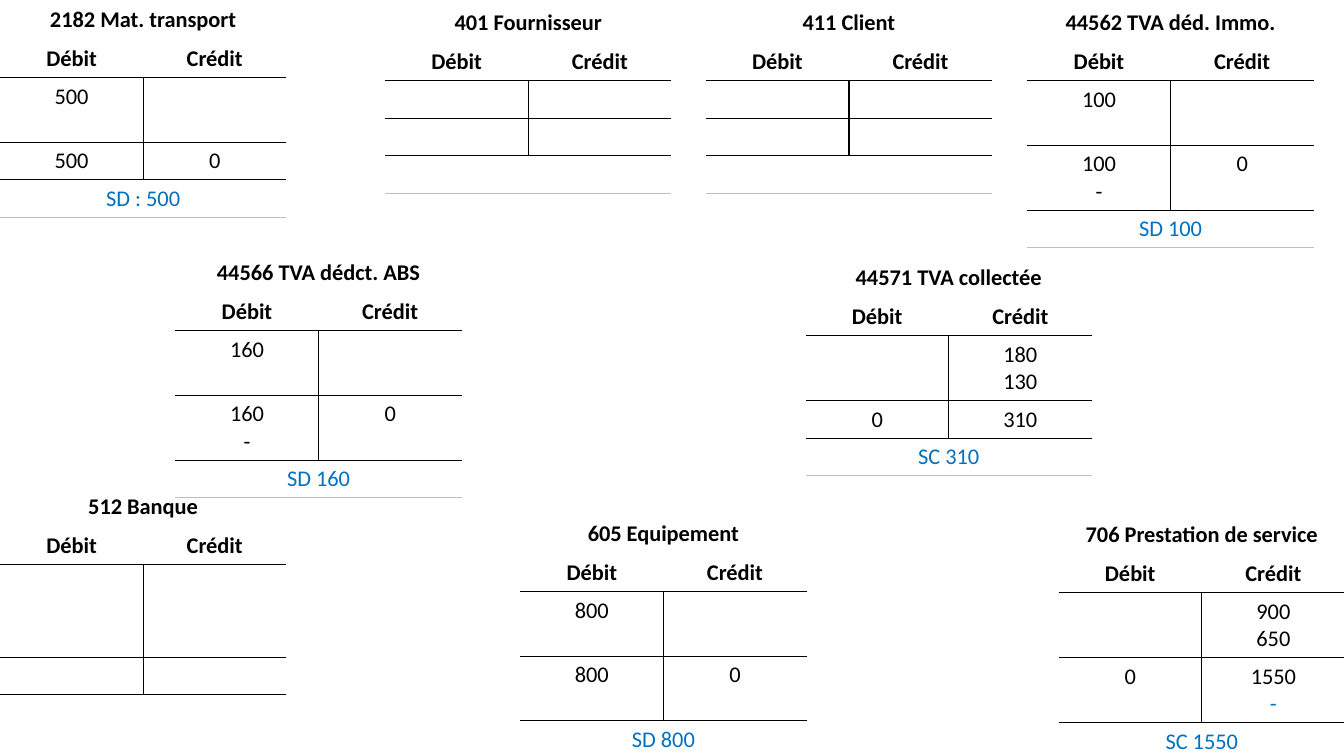
"""Builds a slide of nine T-accounts with their debits, credits and balances."""
from dataclasses import dataclass

import lxml.etree
import pptx
import pptx.dml.color
import pptx.enum.text
import pptx.oxml.ns
import pptx.slide
import pptx.table
import pptx.util

Inches = pptx.util.Inches
qn = pptx.oxml.ns.qn

BLACK = pptx.dml.color.RGBColor(0x00, 0x00, 0x00)
BLUE = pptx.dml.color.RGBColor(0x00, 0x70, 0xC0)
GREY = pptx.dml.color.RGBColor(0xBF, 0xBF, 0xBF)
NO_STYLE = "{2D5ABB26-0587-4C30-8999-92F81FD0307C}"
TEXT_SIZE = 16
COLUMN_WIDTH = 1.42
TITLE_HEIGHT = 0.4
LINE_HEIGHT = 0.37
TWO_LINES = 0.64
ENTRY_ROW, TOTAL_ROW, BALANCE_ROW = 2, 3, 4


@dataclass(frozen=True)
class Account:
    """A T-account; line breaks separate the amounts in one cell."""
    title: str
    left: float
    top: float
    debit: str = ""
    credit: str = ""
    debit_total: str = ""
    credit_total: str = ""
    balance: str = ""
    entry_height: float = TWO_LINES
    total_height: float = LINE_HEIGHT
    balance_height: float = LINE_HEIGHT
    closed: bool = True
    blue_dash: bool = False


ACCOUNTS = [
    Account("512 Banque", 0, 4.83, entry_height=0.92, balance_height=0.61, closed=False),
    Account("2182 Mat. transport", 0, 0, "500", "", "500", "0", "SD : 500"),
    Account("44562 TVA déd. Immo.", 10.19, 0.03, "100", "", "100\n-", "0", "SD 100",
            total_height=TWO_LINES),
    Account("605 Equipement", 5.16, 5.1, "800", "", "800", "0", "SD 800",
            total_height=TWO_LINES),
    Account("706 Prestation de service", 10.5, 5.11, "", "900\n650", "0", "1550\n-",
            "SC 1550", total_height=TWO_LINES, blue_dash=True),
    Account("401 Fournisseur", 3.82, 0.03, entry_height=LINE_HEIGHT),
    Account("44566 TVA dédct. ABS", 1.74, 2.51, "160", "", "160\n-", "0", "SD 160",
            total_height=TWO_LINES),
    Account("411 Client", 7, 0.03, entry_height=LINE_HEIGHT),
    Account("44571 TVA collectée", 7.99, 2.56, "", "180\n130", "0", "310", "SC 310"),
]


def write_cell(cell: pptx.table._Cell, text: str, bold: bool, blue: bool,
               blue_dash: bool) -> None:
    """Write centred lines of text into a cell."""
    frame = cell.text_frame
    for index, line in enumerate(text.split("\n")):
        para = frame.add_paragraph() if index else frame.paragraphs[0]
        para.alignment = pptx.enum.text.PP_ALIGN.CENTER
        if not line:
            lxml.etree.SubElement(para._p, qn("a:endParaRPr"), sz=str(TEXT_SIZE * 100))
            continue
        span = para.add_run()
        span.text = line
        formats = {"name": "Calibri", "size": pptx.util.Pt(TEXT_SIZE), "bold": bold}
        for name, value in formats.items():
            setattr(span.font, name, value)
        is_blue = blue or (blue_dash and line == "-")
        span.font.color.rgb = BLUE if is_blue else BLACK


def draw_borders(cell: pptx.table._Cell, row: int, column: int, closed: bool) -> None:
    """Rule the T of the account and the lines around its totals."""
    borders = {}
    if row in (ENTRY_ROW, TOTAL_ROW):
        borders["a:lnL" if column else "a:lnR"] = BLACK
    if row >= ENTRY_ROW:
        borders["a:lnT"] = BLACK
    if 0 < row < BALANCE_ROW:
        borders["a:lnB"] = BLACK
    elif row == BALANCE_ROW and closed:
        borders["a:lnB"] = GREY
    properties = cell._tc.get_or_add_tcPr()
    for tag, color in borders.items():
        line = lxml.etree.SubElement(properties, qn(tag), w=str(pptx.util.Pt(1)))
        fill = lxml.etree.SubElement(line, qn("a:solidFill"))
        lxml.etree.SubElement(fill, qn("a:srgbClr"), val=str(color))
    cell.fill.background()


def draw_account(page: pptx.slide.Slide, account: Account) -> None:
    """Draw one account as a table of five rows and two columns."""
    texts = [
        (account.title, ""),
        ("Débit", "Crédit"),
        (account.debit, account.credit),
        (account.debit_total, account.credit_total),
        (account.balance, ""),
    ]
    heights = [TITLE_HEIGHT, LINE_HEIGHT, account.entry_height,
               account.total_height, account.balance_height]
    table = page.shapes.add_table(
        len(texts), 2, Inches(account.left), Inches(account.top),
        Inches(2 * COLUMN_WIDTH), Inches(sum(heights))).table
    table.first_row = table.horz_banding = False
    table._tbl.tblPr.find(qn("a:tableStyleId")).text = NO_STYLE
    for column in table.columns:
        column.width = Inches(COLUMN_WIDTH)
    for row, (pair, height) in enumerate(zip(texts, heights)):
        table.rows[row].height = Inches(height)
        for column, text in enumerate(pair):
            cell = table.cell(row, column)
            write_cell(cell, text, row < ENTRY_ROW, row == BALANCE_ROW, account.blue_dash)
            draw_borders(cell, row, column, account.closed)
    for row in (0, BALANCE_ROW):
        table.cell(row, 0).merge(table.cell(row, 1))
    table.cell(0, 0).vertical_anchor = pptx.enum.text.MSO_ANCHOR.MIDDLE


def main() -> None:
    """Build the deck and save it."""
    deck = pptx.Presentation()
    deck.slide_width, deck.slide_height = Inches(13.33), Inches(7.5)
    page = deck.slides.add_slide(deck.slide_layouts[6])
    for account in ACCOUNTS:
        draw_account(page, account)
    deck.save("out.pptx")


if __name__ == "__main__":
    main()
